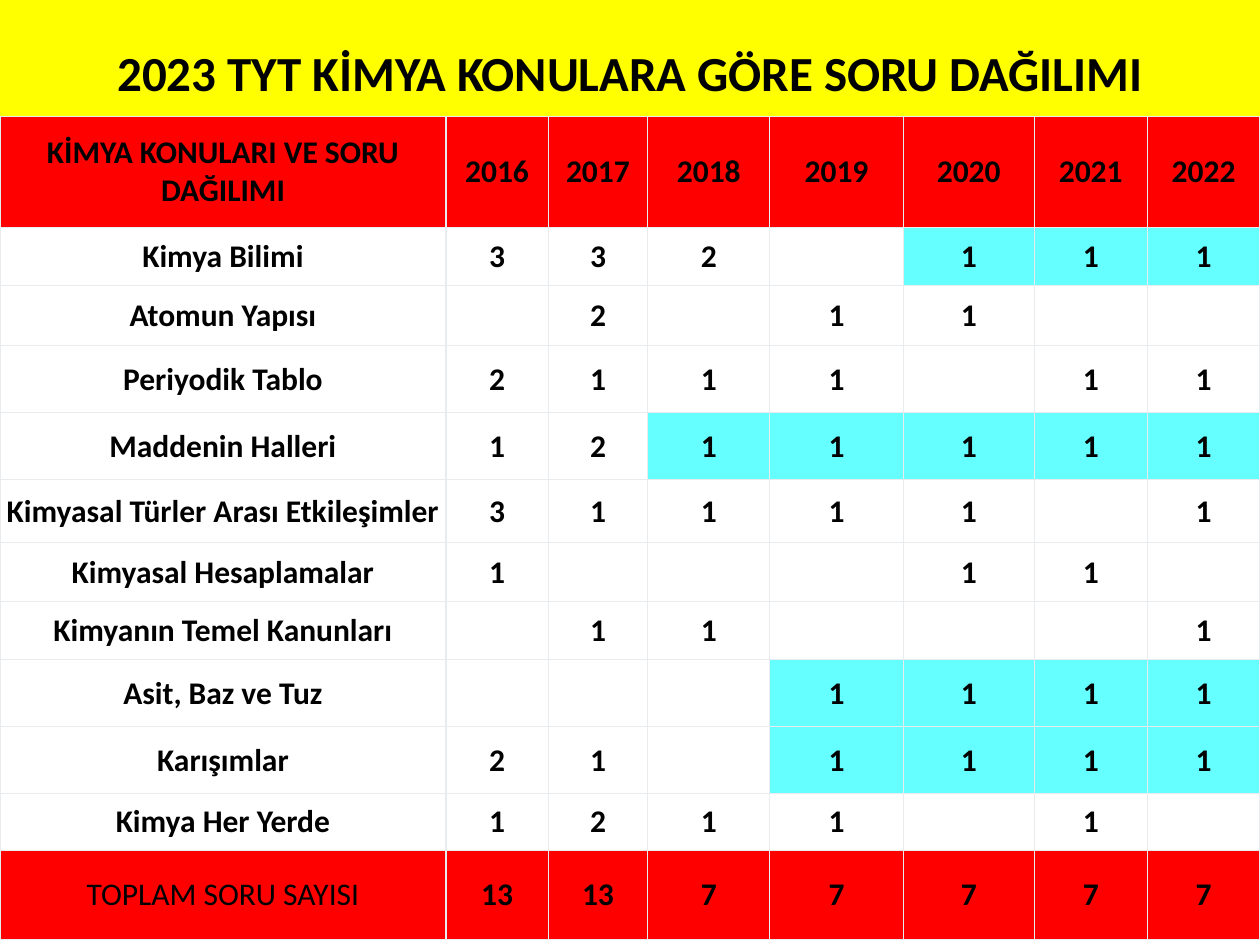
from lxml.etree import SubElement
from pptx import Presentation
from pptx.dml.color import RGBColor
from pptx.enum.shapes import MSO_SHAPE
from pptx.enum.text import MSO_ANCHOR, PP_ALIGN
from pptx.oxml.ns import qn
from pptx.util import Cm, Pt

BLACK, WHITE, RED = "000000", "FFFFFF", "FF0000"
YELLOW, CYAN, GRID = "FFFF00", "66FFFF", "E9ECEF"

HEADER = ["KİMYA KONULARI VE SORU DAĞILIMI", *range(2016, 2023)]
# Topic, questions per year (None = no question), first highlighted year
TOPICS = [
    ("Kimya Bilimi", [3, 3, 2, None, 1, 1, 1], 2020),
    ("Atomun Yapısı", [None, 2, None, 1, 1, None, None], None),
    ("Periyodik Tablo", [2, 1, 1, 1, None, 1, 1], None),
    ("Maddenin Halleri", [1, 2, 1, 1, 1, 1, 1], 2018),
    ("Kimyasal Türler Arası Etkileşimler", [3, 1, 1, 1, 1, None, 1], None),
    ("Kimyasal Hesaplamalar", [1, None, None, None, 1, 1, None], None),
    ("Kimyanın Temel Kanunları", [None, 1, 1, None, None, None, 1], None),
    ("Asit, Baz ve Tuz", [None, None, None, 1, 1, 1, 1], 2019),
    ("Karışımlar", [2, 1, None, 1, 1, 1, 1], 2019),
    ("Kimya Her Yerde", [1, 2, 1, 1, None, 1, None], None),
]
TOTALS = ["TOPLAM SORU SAYISI", 13, 13, 7, 7, 7, 7, 7]

COLUMN_WIDTHS = [8.99, 2.06, 2.01, 2.46, 2.69, 2.64, 2.28, 2.27]
ROW_HEIGHTS = [2.24, 1.17, 1.22, 1.35, 1.35, 1.27, 1.19, 1.17, 1.35, 1.35, 1.14, 1.8]


def color(value):
    return RGBColor.from_string(value)


def paint(target, value):
    target.fill.solid()
    target.fill.fore_color.rgb = color(value)


def write(frame, text, size=18, bold=True, font="Calibri", ink=BLACK):
    para = frame.paragraphs[0]
    para.alignment = PP_ALIGN.CENTER
    span = para.add_run()
    span.text = text
    span.font.name = font
    span.font.size = Pt(size)
    span.font.bold = bold
    span.font.color.rgb = color(ink)


def add_title(page, text):
    box = page.shapes.add_shape(MSO_SHAPE.RECTANGLE, 0, 0, Cm(25.4), Cm(2.92))
    box.shadow.inherit = False
    paint(box, YELLOW)
    box.line.fill.background()
    frame = box.text_frame
    frame.word_wrap = True
    frame.vertical_anchor = MSO_ANCHOR.MIDDLE
    write(frame, text, size=28)


def draw_borders(cell, value, width):
    properties = cell._tc.get_or_add_tcPr()
    for side in ("a:lnL", "a:lnR", "a:lnT", "a:lnB"):
        line = SubElement(properties, qn(side), w=str(Pt(width)))
        fill = SubElement(line, qn("a:solidFill"))
        SubElement(fill, qn("a:srgbClr"), val=value)


def fill_cell(cell, value, background, bold=True):
    draw_borders(cell, GRID, 0.75)
    paint(cell, background)
    cell.vertical_anchor = MSO_ANCHOR.MIDDLE
    cell.margin_left = cell.margin_right = Cm(0.05)
    cell.margin_top = cell.margin_bottom = Cm(0.05)
    if value is not None:
        write(cell.text_frame, str(value), bold=bold)


def add_question_table(page):
    table = page.shapes.add_table(
        len(ROW_HEIGHTS), len(COLUMN_WIDTHS), 0, Cm(2.34),
        Cm(sum(COLUMN_WIDTHS)), Cm(sum(ROW_HEIGHTS))).table
    for column, width in zip(table.columns, COLUMN_WIDTHS):
        column.width = Cm(width)
    for row, height in zip(table.rows, ROW_HEIGHTS):
        row.height = Cm(height)

    # Header and totals
    last = len(ROW_HEIGHTS) - 1
    for index, (title, total) in enumerate(zip(HEADER, TOTALS)):
        fill_cell(table.cell(0, index), title, RED)
        fill_cell(table.cell(last, index), total, RED, bold=index > 0)

    # Topics, with the unbroken run of recent years highlighted
    for row, (topic, counts, start) in enumerate(TOPICS, 1):
        fill_cell(table.cell(row, 0), topic, WHITE)
        for index, count in enumerate(counts, 1):
            highlighted = start is not None and HEADER[index] >= start
            fill_cell(table.cell(row, index), count, CYAN if highlighted else WHITE)


def main():
    deck = Presentation()
    deck.slide_width, deck.slide_height = Cm(25.4), Cm(19.05)
    page = deck.slides.add_slide(deck.slide_layouts[6])
    add_title(page, "2023 TYT KİMYA KONULARA GÖRE SORU DAĞILIMI")
    add_question_table(page)
    deck.save("out.pptx")


if __name__ == "__main__":
    main()
